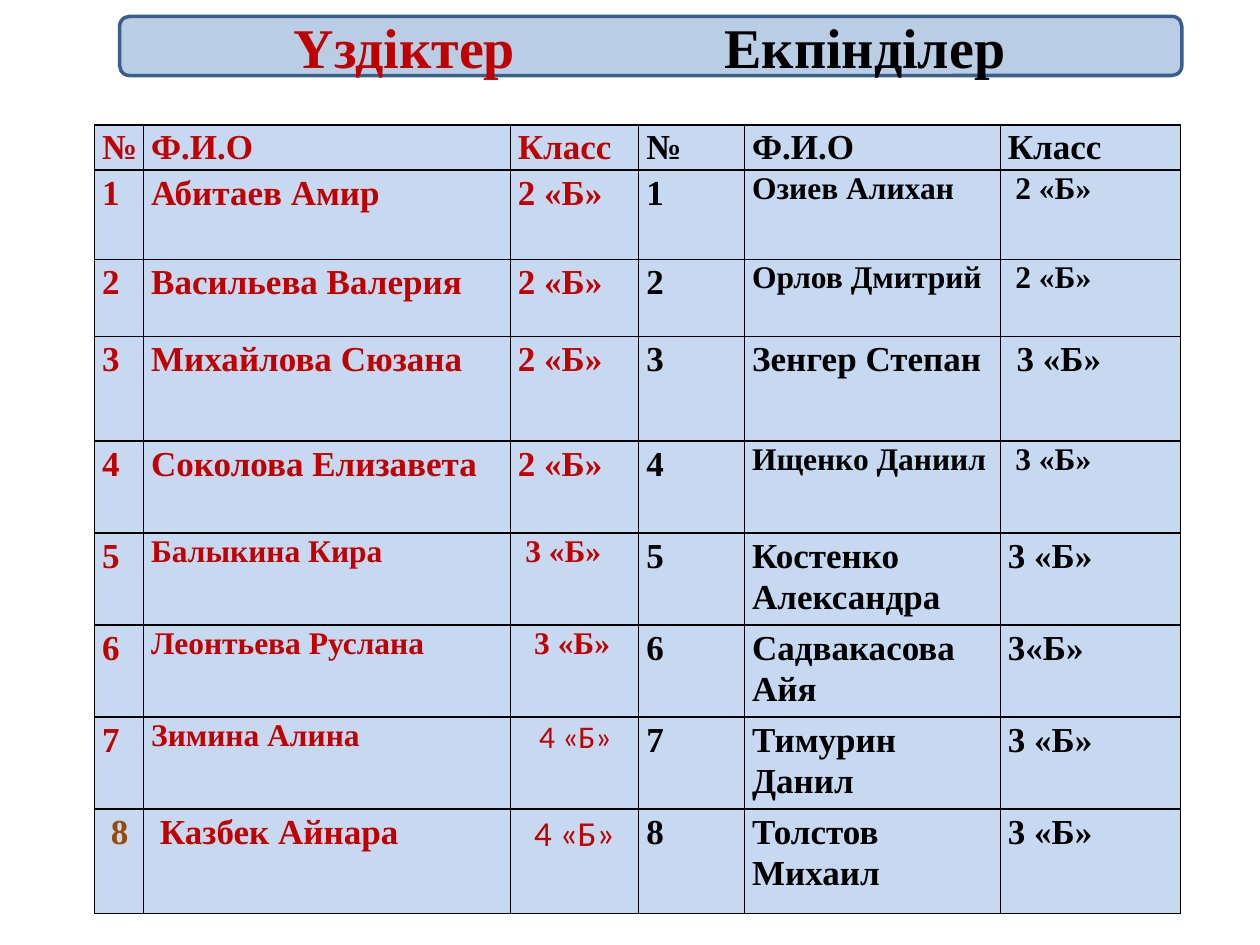
"""Build a slide listing the excellent and the good pupils side by side."""
from lxml.etree import SubElement
from pptx import Presentation
from pptx.dml.color import RGBColor
from pptx.enum.shapes import MSO_SHAPE
from pptx.enum.text import MSO_ANCHOR, MSO_AUTO_SIZE, PP_ALIGN
from pptx.oxml.ns import qn
from pptx.util import Inches, Pt

RED = RGBColor(0xC0, 0x00, 0x00)
BROWN = RGBColor(0x98, 0x48, 0x07)
BLACK = RGBColor(0x00, 0x00, 0x00)
BAR_FILL = RGBColor(0xB9, 0xCD, 0xE5)
BAR_LINE = RGBColor(0x3A, 0x5F, 0x8C)
CELL_FILL = RGBColor(0xC6, 0xD9, 0xF1)
SERIF, SANS = "Times New Roman", "Calibri"

HEADINGS = (("Үздіктер", RED), ("Екпінділер", BLACK))
HEADER = ("№", "Ф.И.О", "Класс")
# Each pupil: name, class, text size, indent of the class
EXCELLENT = [
    ("Абитаев Амир", "2 «Б»", 20, 0),
    ("Васильева Валерия", "2 «Б»", 20, 0),
    ("Михайлова Сюзана", "2 «Б»", 20, 0),
    ("Соколова Елизавета", "2 «Б»", 20, 0),
    ("Балыкина Кира", "3 «Б»", 18, 0.06),
    ("Леонтьева Руслана", "3 «Б»", 18, 0.13),
    ("Зимина Алина", "4 «Б»", 18, 0.17),
    ("Казбек Айнара", "4 «Б»", 20, 0.13),
]
GOOD = [
    ("Озиев Алихан", "2 «Б»", 18, 0.06),
    ("Орлов Дмитрий", "2 «Б»", 18, 0.06),
    ("Зенгер Степан", "3 «Б»", 20, 0.07),
    ("Ищенко Даниил", "3 «Б»", 18, 0.06),
    ("Костенко Александра", "3 «Б»", 20, 0),
    ("Садвакасова Айя", "3«Б»", 20, 0),
    ("Тимурин Данил", "3 «Б»", 20, 0),
    ("Толстов Михаил", "3 «Б»", 20, 0),
]
COLUMNS = (0.39, 2.91, 1.02, 0.84, 2.03, 1.43)
ROWS = (0.36, 0.71, 0.61, 0.83, 0.73, 0.73, 0.73, 0.73, 0.83)
TABLE_LEFT, TABLE_TOP = 0.75, 0.99
BAR = [Inches(side) for side in (0.95, 0.13, 8.43, 0.47)]
HEADING_INSET, HEADING_TAB = 1.38, 3.42
SANS_CELLS = {(7, 2), (8, 2)}
SHIFTED_CELLS = {(8, 0): 0.07, (8, 1): 0.07}
COLOR_CHANGES = {(8, 0): BROWN}


def style(span, size, color, font=SERIF):
    span.font.size = Pt(size)
    span.font.name = font
    span.font.bold = font == SERIF
    span.font.color.rgb = color


def add_heading(page):
    bar = page.shapes.add_shape(MSO_SHAPE.ROUNDED_RECTANGLE, *BAR)
    bar.shadow.inherit = False
    bar.fill.solid()
    bar.fill.fore_color.rgb = BAR_FILL
    bar.line.color.rgb = BAR_LINE
    bar.line.width = Pt(2)

    title = page.shapes.title
    title.left, title.top, title.width, title.height = BAR
    title._element.addprevious(bar._element)
    frame = title.text_frame
    frame.auto_size = MSO_AUTO_SIZE.NONE
    frame.vertical_anchor = MSO_ANCHOR.MIDDLE
    frame.margin_left = Inches(HEADING_INSET)
    frame.margin_right = frame.margin_top = frame.margin_bottom = 0
    para = frame.paragraphs[0]
    para.alignment = PP_ALIGN.LEFT
    tabs = SubElement(para._p.get_or_add_pPr(), qn("a:tabLst"))
    SubElement(tabs, qn("a:tab"), pos=str(Inches(HEADING_TAB)), algn="l")
    for index, (text, color) in enumerate(HEADINGS):
        span = para.add_run()
        span.text = "\t" * index + text
        style(span, 32, color)


def add_borders(cell):
    properties = cell._tc.get_or_add_tcPr()
    for index, side in enumerate(("a:lnL", "a:lnR", "a:lnT", "a:lnB")):
        line = SubElement(properties, qn(side), w=str(Pt(1)))
        fill = SubElement(line, qn("a:solidFill"))
        SubElement(fill, qn("a:srgbClr"), val=str(BLACK))
        properties.insert(index, line)


def fill_cell(cell, text, size, color, font, indent):
    cell.margin_left = Inches(0.06 + indent)
    cell.margin_right = Inches(0.06)
    cell.margin_top, cell.margin_bottom = Inches(0.01), 0
    cell.fill.solid()
    cell.fill.fore_color.rgb = CELL_FILL
    add_borders(cell)
    cell.text_frame.text = text
    para = cell.text_frame.paragraphs[0]
    if size == 20:
        para.line_spacing = 1.07
        para.space_after = Pt(8)
    style(para.runs[0], size, color, font)


def add_pupils(page):
    frame = page.shapes.add_table(
        len(ROWS), len(COLUMNS), Inches(TABLE_LEFT), Inches(TABLE_TOP),
        Inches(sum(COLUMNS)), Inches(sum(ROWS)))
    table = frame.table
    table.first_row = table.horz_banding = False
    for column, width in zip(table.columns, COLUMNS):
        column.width = Inches(width)
    for row, height in zip(table.rows, ROWS):
        row.height = Inches(height)

    for first, pupils, color in ((0, EXCELLENT, RED), (3, GOOD, BLACK)):
        lines = [[(text, 20, 0) for text in HEADER]]
        for number, (name, group, size, indent) in enumerate(pupils, 1):
            lines.append([(str(number), 20, 0), (name, size, 0), (group, size, indent)])
        for row, line in enumerate(lines):
            for column, (text, size, indent) in enumerate(line, first):
                place = row, column
                fill_cell(
                    table.cell(row, column), text, size,
                    COLOR_CHANGES.get(place, color),
                    SANS if place in SANS_CELLS else SERIF,
                    SHIFTED_CELLS.get(place, indent))


def main():
    deck = Presentation()
    deck.slide_width, deck.slide_height = Inches(10), Inches(7.5)
    page = deck.slides.add_slide(deck.slide_layouts[5])
    add_heading(page)
    add_pupils(page)
    deck.save("out.pptx")


if __name__ == "__main__":
    main()
